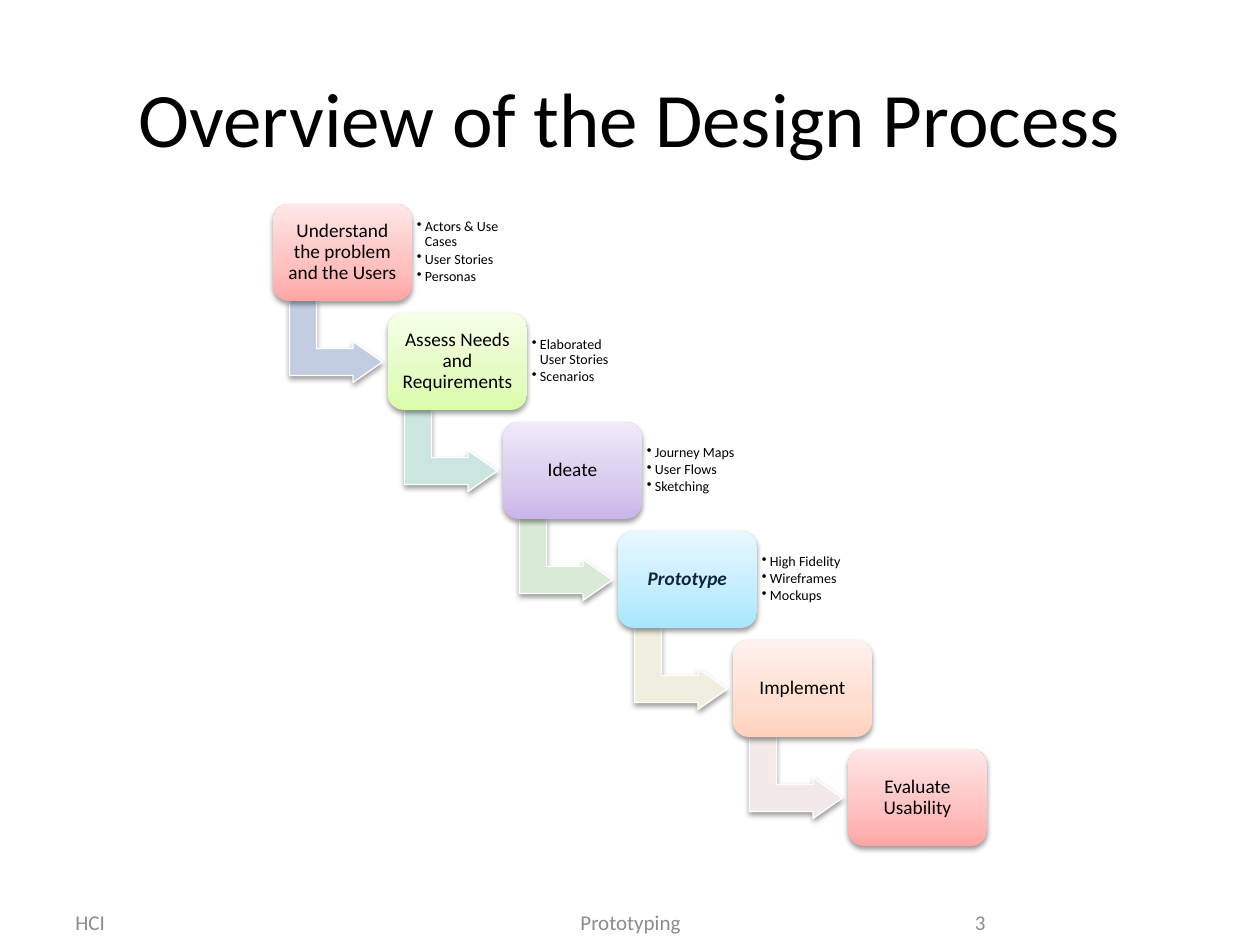
from copy import deepcopy
from dataclasses import dataclass

from lxml.etree import SubElement
from pptx import Presentation
from pptx.dml.color import RGBColor
from pptx.enum.shapes import MSO_SHAPE
from pptx.enum.text import MSO_ANCHOR, PP_ALIGN
from pptx.oxml.ns import qn
from pptx.util import Emu, Pt

PX = 914400 / 126
FONT = "Calibri"
STEP_X, STEP_Y = 115, 109
BOX_WIDTH, BOX_HEIGHT = 139, 97

COLORS = {
    "text": "000000", "footer": "8C8C8C", "emphasis": "0F243E",
    "white": "FFFFFF", "shadow": "000000",
}
# Gradient stops at 0, 35 and 100 percent, from the bottom up
GRADIENTS = {
    "red": ("FFA6A5", "FFC0BF", "FFE7E7"),
    "green": ("DAFDA7", "E4FCC2", "F5FFE7"),
    "purple": ("C9B5E8", "D8CBEE", "F0EAF9"),
    "blue": ("A7E6FF", "C1EDFF", "E7F8FF"),
    "orange": ("FFD2BD", "FFDED0", "FFF2ED"),
}
STOP_POSITIONS = (0, 0.35, 1)


@dataclass
class Label:
    text: str
    left: int
    width: int
    align: PP_ALIGN


@dataclass
class Stage:
    name: str
    gradient: str
    arrow_color: str = ""
    methods: tuple[str, ...] = ()
    emphasis: bool = False


FOOTERS = [
    Label("HCI", 63, 294, PP_ALIGN.LEFT),
    Label("Prototyping", 431, 399, PP_ALIGN.CENTER),
    Label("3", 903, 95, PP_ALIGN.RIGHT),
]
STAGES = [
    Stage("Understand the problem and the Users", "red", "C2CDE1",
          ("Actors & Use Cases", "User Stories", "Personas")),
    Stage("Assess Needs and Requirements", "green", "CCE6DF",
          ("Elaborated User Stories", "Scenarios")),
    Stage("Ideate", "purple", "D9EBD6",
          ("Journey Maps", "User Flows", "Sketching")),
    Stage("Prototype", "blue", "EFEEDF",
          ("High Fidelity", "Wireframes", "Mockups"), emphasis=True),
    Stage("Implement", "orange", "F4E9E9"),
    Stage("Evaluate Usability", "red"),
]


def px(value: int) -> Emu:
    return Emu(round(value * PX))


def place(left: int, top: int, width: int, height: int) -> list[Emu]:
    return [px(value) for value in (left, top, width, height)]


def set_up_frame(frame, inset: int | None = None) -> None:
    frame.word_wrap = True
    frame.vertical_anchor = MSO_ANCHOR.MIDDLE
    if inset is not None:
        for side in ("left", "top", "right", "bottom"):
            setattr(frame, f"margin_{side}", px(inset))


def write(para, text: str, size: int, color: str = "text", **formats) -> None:
    span = para.add_run()
    span.text = text
    values = {"name": FONT, "size": Pt(size), **formats}
    for name, value in values.items():
        setattr(span.font, name, value)
    span.font.color.rgb = RGBColor.from_string(COLORS[color])


def add_label(page, label: Label, top: int, height: int, size: int, color: str) -> None:
    box = page.shapes.add_textbox(*place(label.left, top, label.width, height))
    set_up_frame(box.text_frame)
    para = box.text_frame.paragraphs[0]
    para.alignment = label.align
    write(para, label.text, size, color)


def add_shadow(shape) -> None:
    shape.shadow.inherit = False
    effects = shape._element.spPr.find(qn("a:effectLst"))
    shadow = SubElement(effects, qn("a:outerShdw"), blurRad="40000", dist="20000",
                        dir="5400000", rotWithShape="0")
    tint = SubElement(shadow, qn("a:srgbClr"), val=COLORS["shadow"])
    SubElement(tint, qn("a:alpha"), val="38000")


def fill_gradient(shape, colors: tuple[str, ...]) -> None:
    shape.fill.gradient()
    shape.fill.gradient_angle = 90
    stop_list = shape._element.spPr.find(qn("a:gradFill")).find(qn("a:gsLst"))
    stop_list.append(deepcopy(stop_list[-1]))
    for stop, position, color in zip(shape.fill.gradient_stops, STOP_POSITIONS, colors):
        stop.position = position
        stop.color.rgb = RGBColor.from_string(color)


def add_arrow(page, left: int, top: int, color: str) -> None:
    arrow = page.shapes.add_shape(MSO_SHAPE.BENT_UP_ARROW, *place(left, top, 82, 93))
    arrow.rotation = 90
    for index, value in enumerate((0.33, 0.25, 0.36)):
        arrow.adjustments[index] = value
    arrow.fill.solid()
    arrow.fill.fore_color.rgb = RGBColor.from_string(color)
    arrow.line.color.rgb = RGBColor.from_string(COLORS["white"])
    arrow.line.width = Pt(0.75)
    add_shadow(arrow)


def add_stage_box(page, stage: Stage, left: int, top: int) -> None:
    box = page.shapes.add_shape(MSO_SHAPE.ROUNDED_RECTANGLE,
                                *place(left, top, BOX_WIDTH, BOX_HEIGHT))
    fill_gradient(box, GRADIENTS[stage.gradient])
    box.line.fill.background()
    add_shadow(box)
    set_up_frame(box.text_frame, 6)
    para = box.text_frame.paragraphs[0]
    para.alignment = PP_ALIGN.CENTER
    para.line_spacing = 0.9
    write(para, stage.name, 11, "emphasis" if stage.emphasis else "text",
          bold=stage.emphasis, italic=stage.emphasis)


def add_methods(page, methods: tuple[str, ...], left: int, top: int) -> None:
    box = page.shapes.add_textbox(*place(left, top, 101, 78))
    frame = box.text_frame
    set_up_frame(frame, 5)
    for index, method in enumerate(methods):
        para = frame.add_paragraph() if index else frame.paragraphs[0]
        para.line_spacing = 0.9
        para.space_after = Pt(1.2)
        properties = para._p.get_or_add_pPr()
        properties.set("marL", str(px(8)))
        properties.set("indent", str(-px(8)))
        SubElement(properties, qn("a:buChar"), char="•")
        write(para, method, 8)


def main() -> None:
    deck = Presentation()
    deck.slide_width, deck.slide_height = px(1260), px(945)
    page = deck.slides.add_slide(deck.slide_layouts[6])

    # Title and footer
    title = Label("Overview of the Design Process", 63, 1134, PP_ALIGN.CENTER)
    add_label(page, title, 38, 157, 44, "text")
    for footer in FOOTERS:
        add_label(page, footer, 903, 39, 12, "footer")

    # Staircase of stages
    for index, stage in enumerate(STAGES):
        left, top = 273 + index * STEP_X, 204 + index * STEP_Y
        if stage.arrow_color:
            add_arrow(page, left + 22, top + 91, stage.arrow_color)
        add_stage_box(page, stage, left, top)
        if stage.methods:
            add_methods(page, stage.methods, left + BOX_WIDTH, top + 9)

    deck.save("out.pptx")


if __name__ == "__main__":
    main()
